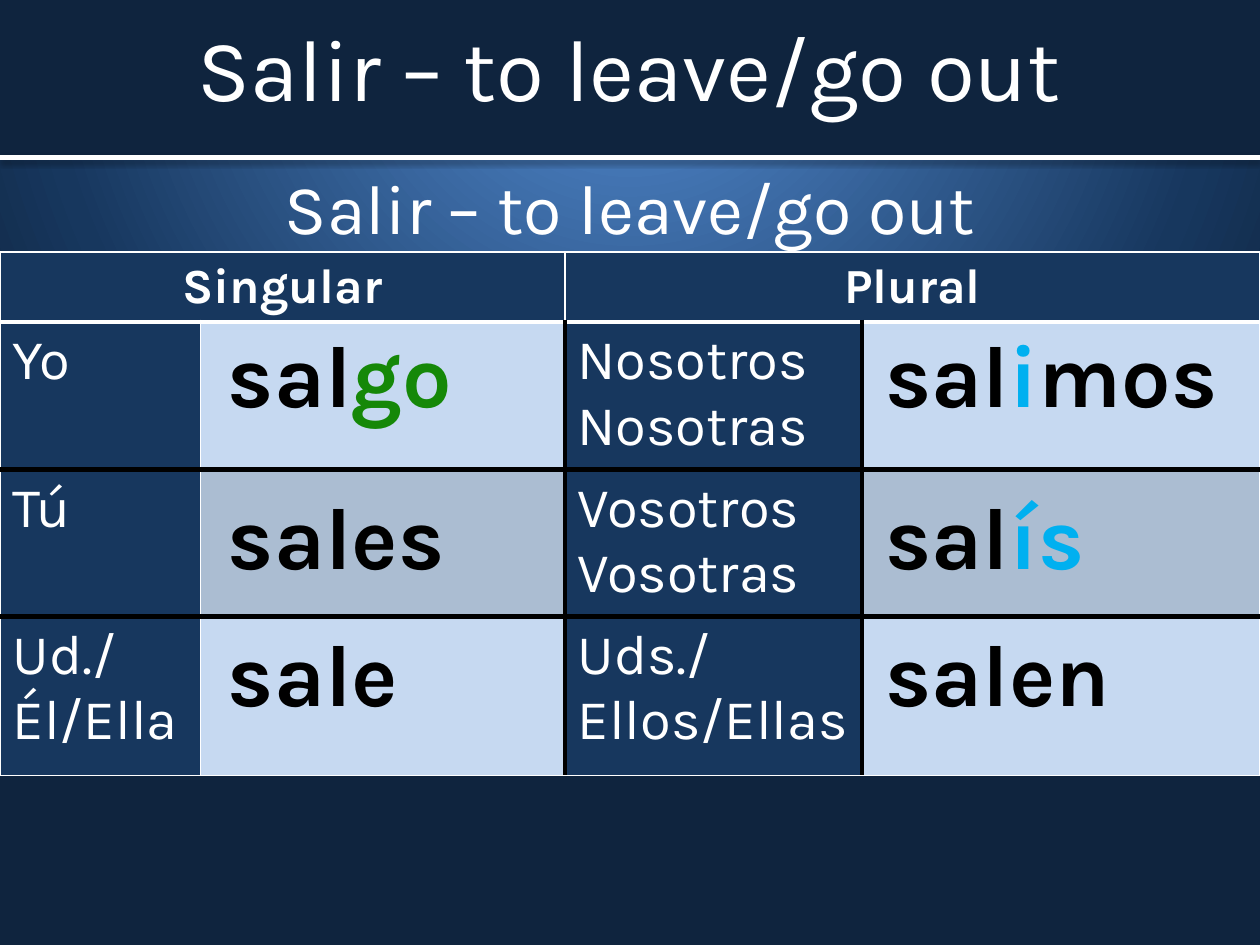
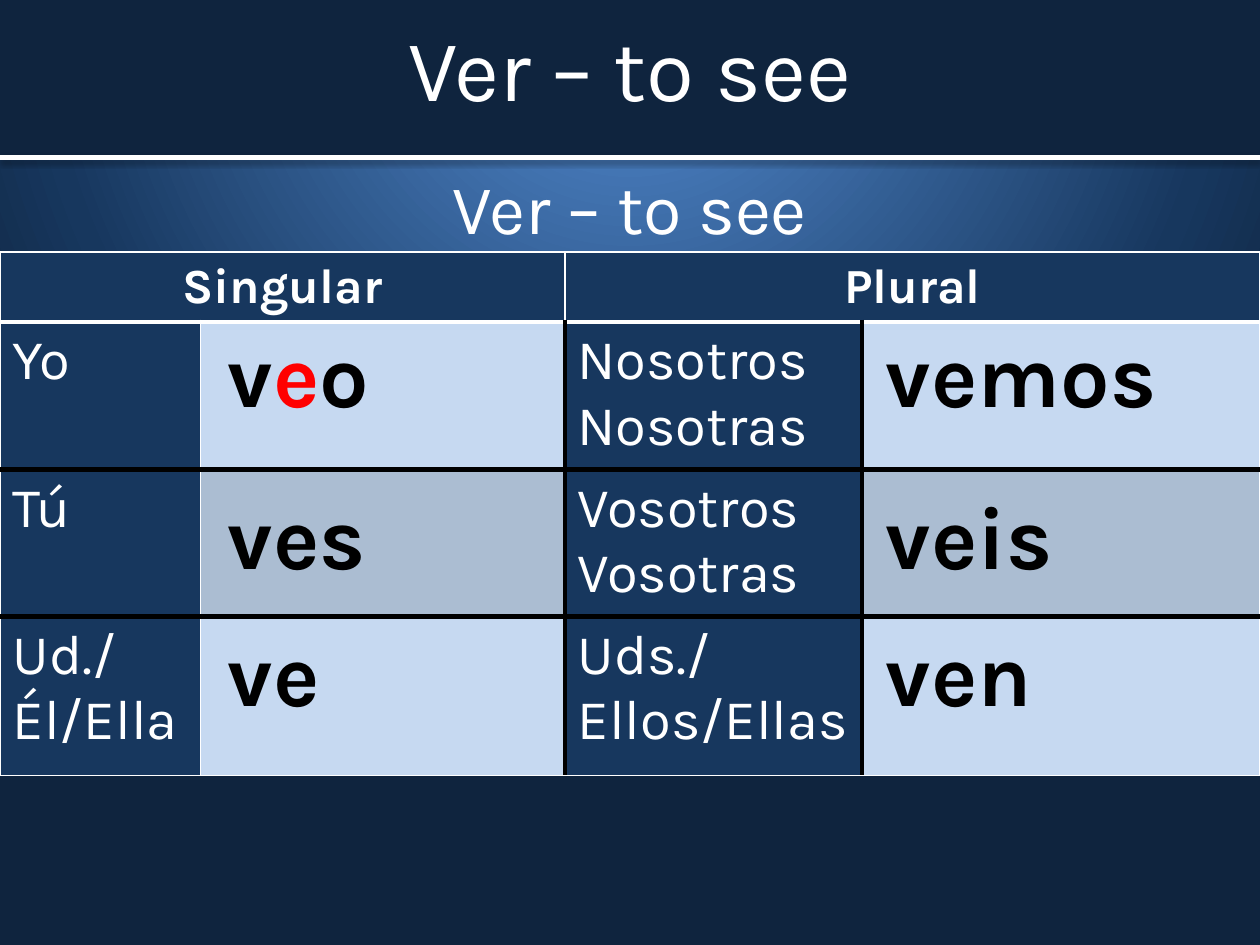
from pptx import Presentation
from pptx.dml.color import RGBColor
from pptx.enum.shapes import MSO_CONNECTOR, MSO_SHAPE
from pptx.enum.text import MSO_ANCHOR, MSO_AUTO_SIZE, PP_ALIGN
from pptx.oxml import parse_xml
from pptx.oxml.ns import nsdecls
from pptx.util import Cm, Pt

RECT = MSO_SHAPE.RECTANGLE
LINE = MSO_CONNECTOR.STRAIGHT
TOP, MIDDLE = MSO_ANCHOR.TOP, MSO_ANCHOR.MIDDLE
LEFT, CENTER = PP_ALIGN.LEFT, PP_ALIGN.CENTER
FIXED = MSO_AUTO_SIZE.NONE

WHITE = RGBColor(0xFF, 0xFF, 0xFF)
BLACK = RGBColor(0, 0, 0)
NIGHT = RGBColor(0x0F, 0x24, 0x3E)
NAVY = RGBColor(0x17, 0x37, 0x5E)
BLUE = RGBColor(0x55, 0x8E, 0xD5)
PALE = RGBColor(0xC6, 0xD9, 0xF1)
GREY = RGBColor(0xAB, 0xBD, 0xD2)
GREEN = RGBColor(0x15, 0x88, 0x08)
SKY = RGBColor(0x00, 0xB0, 0xF0)
RED = RGBColor(0xFF, 0, 0)

FACE = "Karla"
TITLE = {"name": FACE, "size": Pt(50), "bold": False}
SUB = {"name": FACE, "size": Pt(40), "bold": False}
HEAD = {"name": FACE, "size": Pt(28), "bold": True}
LABEL = {"name": FACE, "size": Pt(32), "bold": False}
VERB = {"name": FACE, "size": Pt(50), "bold": True}

WIDE, HIGH = 25.4, 19.05
BAND = (0, 0, WIDE, 3.18)
TITLE_BOX = (0, 0, WIDE, 2.69)
SUB_BOX = (0, 3.18, WIDE, 13.2)
GRID_BOX = (0, 5.08, WIDE, 10.55)
COLS = (4.04, 7.35, 5.99, 8.02)
ROWS = (1.41, 2.97, 2.97, 3.2)
VERB_X = (4.34, 17.6)
VERB_Y = (6.48, 9.73, 12.5)
VERB_W = (6.25, 7.8)
VERB_H = 2.36

THIN, THICK, DARK = (WHITE, 1), (WHITE, 3), (BLACK, 3)
ROW_LINES = (THIN, THICK, DARK, DARK, THIN)
COL_LINES = (THIN, THIN, DARK, DARK, THIN)

LABELS = (
    ("Yo", "Nosotros\nNosotras"),
    ("Tú", "Vosotros\nVosotras"),
    ("Ud./Él/Ella", "Uds./Ellos/Ellas"),
)
SLIDES = (
    ("Salir – to leave/go out", (
        ([("sal", BLACK), ("go", GREEN)],
         [("sal", BLACK), ("i", SKY), ("mos", BLACK)]),
        ([("sales", BLACK)], [("sal", BLACK), ("ís", SKY)]),
        ([("sale", BLACK)], [("salen", BLACK)]),
    )),
    ("Ver – to see", (
        ([("v", BLACK), ("e", RED), ("o", BLACK)], [("vemos", BLACK)]),
        ([("ves", BLACK)], [("veis", BLACK)]),
        ([("ve", BLACK)], [("ven", BLACK)]),
    )),
)


def lengths(box):
    """Turn a box in centimetres into lengths."""
    return [Cm(side) for side in box]


def apply(thing, values):
    """Set each named value on an object."""
    for name, value in values.items():
        setattr(thing, name, value)


def add_run(para, text, style, color=WHITE):
    """Add a styled run to a paragraph."""
    run = para.add_run()
    run.text = text
    apply(run.font, style)
    run.font.color.rgb = color


def write(frame, text, style, align=LEFT):
    """Write lines of white text, one paragraph each."""
    for i, line in enumerate(text.split("\n")):
        para = frame.add_paragraph() if i else frame.paragraphs[0]
        para.alignment = align
        add_run(para, line, style)


def paint_back(master):
    """Give the master its radial gradient."""
    master.background.fill.gradient()
    old = master.element.xpath(".//p:bgPr/a:gradFill")[0]
    stops = "".join(
        f'<a:gs pos="{pos}000"><a:srgbClr val="{color}"/></a:gs>'
        for pos, color in ((0, BLUE), (75, NAVY), (100, NIGHT)))
    old.getparent().replace(old, parse_xml(
        f'<a:gradFill {nsdecls("a")} rotWithShape="1"><a:gsLst>{stops}</a:gsLst>'
        '<a:path path="circle"><a:fillToRect l="50000" t="-80000" '
        'r="50000" b="180000"/></a:path></a:gradFill>'))


def fill_holder(holder, box, text, style, anchor):
    """Place a placeholder and write its centred text."""
    apply(holder, dict(zip(("left", "top", "width", "height"), lengths(box))))
    frame = holder.text_frame
    apply(frame, {"word_wrap": True, "auto_size": FIXED, "vertical_anchor": anchor})
    write(frame, text, style, CENTER)


def draw_band(slide, box):
    """Draw the dark title band and the white rule below it."""
    band = slide.shapes.add_shape(RECT, *lengths(box))
    band.shadow.inherit = False
    band.fill.solid()
    band.fill.fore_color.rgb = NIGHT
    band.line.fill.background()
    slide.shapes.title.element.addprevious(band.element)
    x, y, w, h = box
    rule = slide.shapes.add_connector(LINE, *lengths((x, y + h, x + w, y + h)))
    rule.line.color.rgb = WHITE
    rule.line.width = Pt(3)
    rule.element.spPr.append(parse_xml(
        f'<a:effectLst {nsdecls("a")}><a:outerShdw blurRad="{Pt(3.1)}" '
        f'dist="{Pt(1.6)}" dir="5400000" rotWithShape="0"><a:srgbClr val="{BLACK}">'
        '<a:alpha val="38000"/></a:srgbClr></a:outerShdw></a:effectLst>'))


def set_edges(cell, edges):
    """Set left, right, top and bottom cell lines; None hides one."""
    props = cell._tc.get_or_add_tcPr()
    for side, edge in zip("LRTB", edges):
        color, width = edge or (None, 0)
        ink = (f'<a:solidFill><a:srgbClr val="{color}"/></a:solidFill>'
               if edge else "<a:noFill/>")
        props.append(parse_xml(
            f'<a:ln{side} {nsdecls("a")} w="{Pt(width)}">{ink}</a:ln{side}>'))


def add_grid(slide, box, cols, rows):
    """Add a plain table with the given column and row sizes."""
    grid = slide.shapes.add_table(len(rows), len(cols), *lengths(box)).table
    apply(grid, {"first_row": False, "horz_banding": False})
    for col, width in zip(grid.columns, cols):
        col.width = Cm(width)
    for row, height in zip(grid.rows, rows):
        row.height = Cm(height)
    return grid


def draw_grid(slide, box):
    """Draw the table of persons."""
    grid = add_grid(slide, box, COLS, ROWS)
    for r in range(len(ROWS)):
        sides = COL_LINES if r else (THIN,) * len(COL_LINES)
        for c in range(len(COLS)):
            cell = grid.cell(r, c)
            set_edges(cell, sides[c:c + 2] + ROW_LINES[r:r + 2])
            cell.fill.solid()
            tint = GREY if r == 2 else PALE
            cell.fill.fore_color.rgb = tint if r and c % 2 else NAVY
    for i, head in enumerate(("Singular", "Plural")):
        c = 2 * i
        grid.cell(0, c).merge(grid.cell(0, c + 1))
        write(grid.cell(0, c).text_frame, head, HEAD, CENTER)
        for r, pair in enumerate(LABELS, 1):
            write(grid.cell(r, c).text_frame, pair[i], LABEL)


def draw_verb(slide, box, parts):
    """Draw one verb form in a clear one-cell table."""
    cell = add_grid(slide, box, box[2:3], box[3:]).cell(0, 0)
    set_edges(cell, (None,) * 4)
    cell.fill.background()
    for text, color in parts:
        add_run(cell.text_frame.paragraphs[0], text, VERB, color)


def build_slide(deck, name, forms):
    """Build one verb slide."""
    slide = deck.slides.add_slide(deck.slide_layouts[0])
    title, sub = slide.placeholders
    fill_holder(title, TITLE_BOX, name, TITLE, MIDDLE)
    fill_holder(sub, SUB_BOX, name, SUB, TOP)
    sub.text_frame.paragraphs[0].space_before = Pt(4)
    draw_band(slide, BAND)
    draw_grid(slide, GRID_BOX)
    for i, (x, w) in enumerate(zip(VERB_X, VERB_W)):
        for y, pair in zip(VERB_Y, forms):
            draw_verb(slide, (x, y, w, VERB_H), pair[i])


def main():
    """Build and save the deck."""
    deck = Presentation()
    apply(deck, {"slide_width": Cm(WIDE), "slide_height": Cm(HIGH)})
    paint_back(deck.slide_master)
    for name, forms in SLIDES:
        build_slide(deck, name, forms)
    deck.save("out.pptx")


if __name__ == "__main__":
    main()
